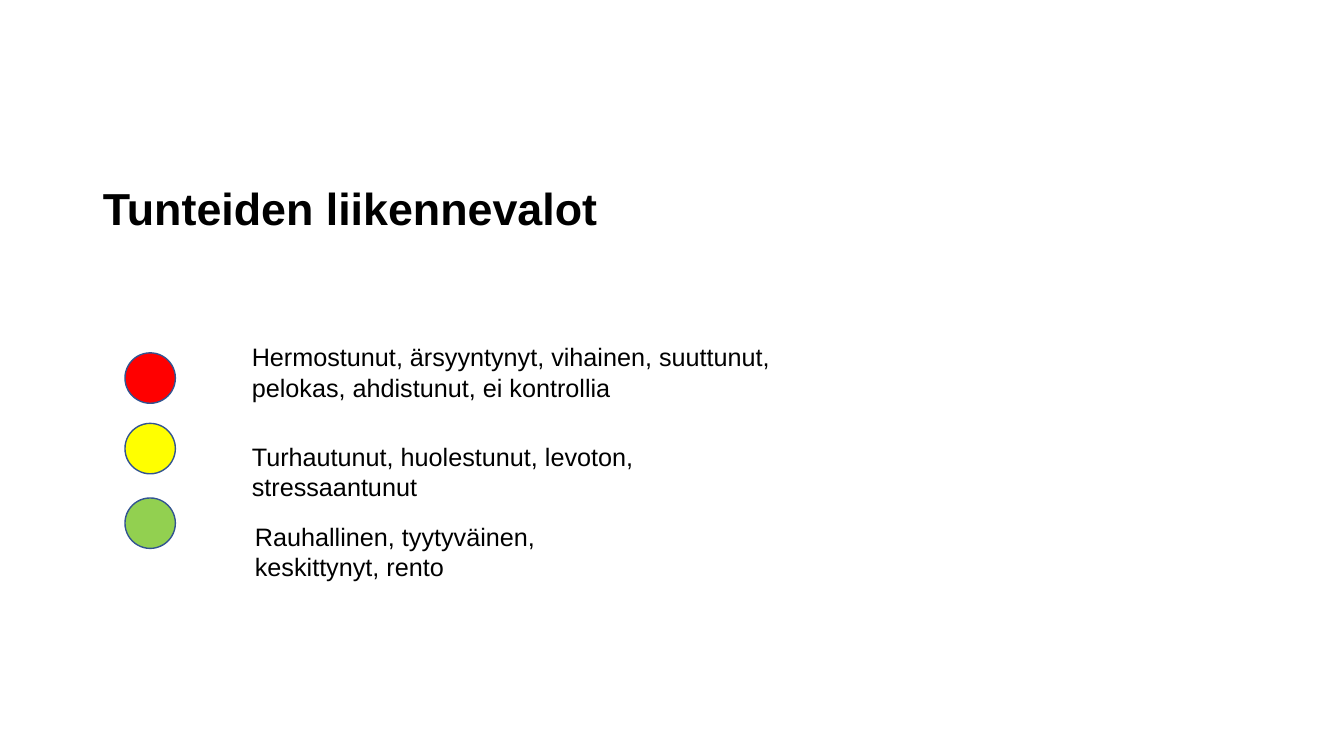
from pptx import Presentation
from pptx.dml.color import RGBColor
from pptx.enum.shapes import MSO_SHAPE
from pptx.enum.text import MSO_ANCHOR, MSO_AUTO_SIZE, PP_ALIGN
from pptx.util import Inches, Pt

WIDE, HIGH = Inches(13.333), Inches(7.5)
HEAD = {"name": "Arial", "size": Pt(32), "bold": True}
BODY = {"name": "Arial", "size": Pt(18), "bold": False}
LIGHTS = [
    ("FF0000", 46.67, (18, 44.53, 45.54, 9.47),
     "Hermostunut, ärsyyntynyt, vihainen, suuttunut, pelokas, ahdistunut, ei kontrollia"),
    ("FFFF00", 56, (18, 57.73, 38.94, 9.47),
     "Turhautunut, huolestunut, levoton, stressaantunut"),
    ("92D050", 65.87, (18.23, 68.27, 22.5, 9.47),
     "Rauhallinen, tyytyväinen, keskittynyt, rento"),
]


def paint(color, code):
    """Set a colour from a hex string."""
    color.rgb = RGBColor.from_string(code)


def place(left, top, width, height):
    """Turn percent shares of the slide into lengths."""
    return [round(share * full / 100) for share, full in
            ((left, WIDE), (top, HIGH), (width, WIDE), (height, HIGH))]


def write(frame, text, look):
    """Write one left-aligned paragraph in the given format."""
    frame.text = text
    frame.word_wrap = True
    para = frame.paragraphs[0]
    para.alignment = PP_ALIGN.LEFT
    font = para.runs[0].font
    for key, value in look.items():
        setattr(font, key, value)
    paint(font.color, "000000")
    return para


def title(slide, text, box):
    """Move and format the title placeholder."""
    shape = slide.shapes.title
    shape.left, shape.top, shape.width, shape.height = place(*box)
    shape.text_frame.vertical_anchor = MSO_ANCHOR.MIDDLE
    write(shape.text_frame, text, HEAD).line_spacing = 0.9


def light(slide, code, top):
    """Draw one round traffic light."""
    shape = slide.shapes.add_shape(
        MSO_SHAPE.FLOWCHART_CONNECTOR, *place(9.3, top, 3.75, 6.67))
    shape.shadow.inherit = False
    shape.fill.solid()
    paint(shape.fill.fore_color, code)
    paint(shape.line.color, "325491")
    shape.line.width = Pt(1)


def label(slide, text, box):
    """Add the list of feelings beside a light."""
    frame = slide.shapes.add_textbox(*place(*box)).text_frame
    write(frame, text, BODY)
    frame.auto_size = MSO_AUTO_SIZE.SHAPE_TO_FIT_TEXT


def main():
    """Build and save the slide."""
    deck = Presentation()
    deck.slide_width, deck.slide_height = WIDE, HIGH
    slide = deck.slides.add_slide(deck.slide_layouts.get_by_name("Title Only"))
    title(slide, "Tunteiden liikennevalot", (6.9, 18.8, 86.25, 18.13))
    for code, top, box, text in LIGHTS:
        light(slide, code, top)
        label(slide, text, box)
    deck.save("out.pptx")


if __name__ == "__main__":
    main()
